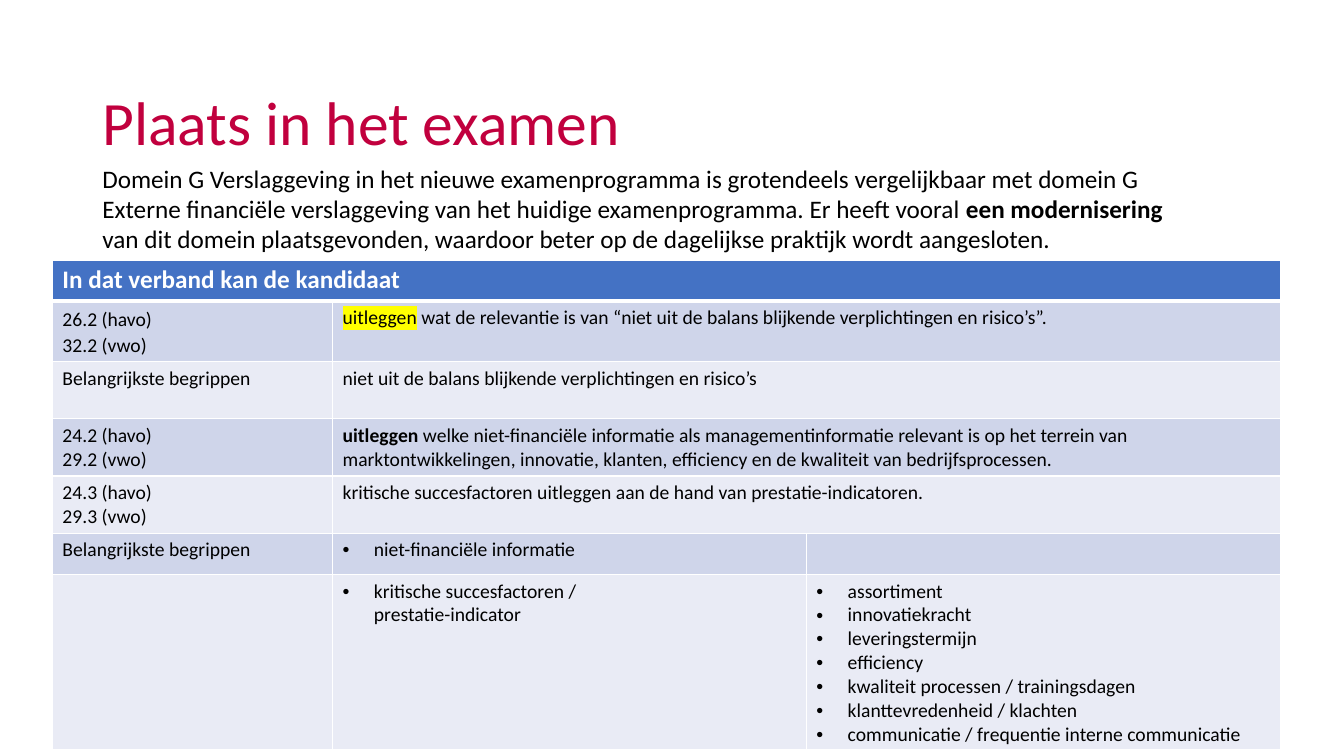
from lxml.etree import SubElement
from pptx import Presentation
from pptx.dml.color import RGBColor
from pptx.enum.text import MSO_ANCHOR, PP_ALIGN
from pptx.oxml import parse_xml
from pptx.oxml.ns import nsdecls, qn
from pptx.util import Cm, Pt

COLOURS = {
    "title": "C1003E", "text": "000000", "white": "FFFFFF", "header": "4472C4",
    "dark": "CFD5EA", "light": "E9EBF5", "marker": "FFFF00",
}
TITLE = {"name": "Calibri", "size": Pt(44), "bold": False}
INTRO = {"name": "Calibri", "size": Pt(18), "bold": False}
HEADER = {"name": "Calibri", "size": Pt(18), "bold": True}
CELL = {"name": "Calibri", "size": Pt(14), "bold": False}
BOLD = {"bold": True}

COLUMN_WIDTHS = [7.06, 11.94, 11.94]
ROW_HEIGHTS = [1.04, 1.49, 1.44, 1.44, 1.44, 1.04, 4.37]
BULLET_INDENT = Cm(0.79)

# Each row: level or term, then one or two content cells
# A cell is a list of paragraphs, a paragraph a list of (text, extra format) spans
ROWS = [
    [[[("26.2 (havo)", {})], [("32.2 (vwo)", {})]],
     [[("uitleggen", {"marker": True}),
       (" wat de relevantie is van “niet uit de balans blijkende "
        "verplichtingen en risico’s”.", {})]]],
    [[[("Belangrijkste begrippen", {})]],
     [[("niet uit de balans blijkende verplichtingen en risico’s", {})]]],
    [[[("24.2 (havo)\n29.2 (vwo)", {})]],
     [[("uitleggen", BOLD),
       (" welke niet-financiële informatie als managementinformatie relevant is "
        "op het terrein van marktontwikkelingen, innovatie, klanten, efficiency "
        "en de kwaliteit van bedrijfsprocessen.", {})]]],
    [[[("24.3 (havo)\n29.3 (vwo)", {})]],
     [[("kritische succesfactoren uitleggen aan de hand van "
        "prestatie-indicatoren.", {})]]],
    [[[("Belangrijkste begrippen", {})]],
     [[("niet-financiële informatie", {})]],
     []],
    [[],
     [[("kritische succesfactoren /\nprestatie-indicator", {})]],
     [[(factor, {})] for factor in (
         "assortiment", "innovatiekracht", "leveringstermijn", "efficiency",
         "kwaliteit processen / trainingsdagen", "klanttevredenheid / klachten",
         "communicatie / frequentie interne communicatie")]],
]


def colour(name):
    return RGBColor.from_string(COLOURS[name])


def add_span(para, text, values, colour_name):
    """Add text in one format; a newline becomes a line break."""
    for index, line in enumerate(text.split("\n")):
        if index:
            para.add_line_break()
        span = para.add_run()
        span.text = line
        span.font.color.rgb = colour(colour_name)
        for name, value in values.items():
            if name != "marker":
                setattr(span.font, name, value)
        if values.get("marker"):
            highlight = parse_xml(
                f'<a:highlight {nsdecls("a")}>'
                f'<a:srgbClr val="{COLOURS["marker"]}"/></a:highlight>')
            span.font._element.find(qn("a:solidFill")).addnext(highlight)


def add_bullet(para):
    properties = para._p.get_or_add_pPr()
    properties.set("marL", str(BULLET_INDENT))
    properties.set("indent", str(-BULLET_INDENT))
    SubElement(properties, qn("a:buFont")).set("typeface", "Arial")
    SubElement(properties, qn("a:buChar")).set("char", "•")


def fill_frame(frame, paragraphs, values, colour_name="text", bullets=False,
               line_spacing=None):
    for index, spans in enumerate(paragraphs):
        para = frame.add_paragraph() if index else frame.paragraphs[0]
        para.alignment = PP_ALIGN.LEFT
        if line_spacing:
            para.line_spacing = line_spacing
        if bullets:
            add_bullet(para)
        for text, extra in spans:
            add_span(para, text, {**values, **extra}, colour_name)


def style_cell(cell, fill_name, bottom_width=1):
    """Set the fill and the white borders of a cell."""
    cell.fill.solid()
    cell.fill.fore_color.rgb = colour(fill_name)
    widths = {"lnL": 1, "lnR": 1, "lnT": 1, "lnB": bottom_width}
    for index, (side, width) in enumerate(widths.items()):
        border = parse_xml(
            f'<a:{side} {nsdecls("a")} w="{Pt(width)}"><a:solidFill>'
            f'<a:srgbClr val="{COLOURS["white"]}"/></a:solidFill></a:{side}>')
        cell._tc.get_or_add_tcPr().insert(index, border)


def add_title(page):
    title = page.shapes.title
    title.left, title.top, title.width, title.height = (
        Cm(2.33), Cm(1.32), Cm(29.21), Cm(3.68))
    title.text_frame.vertical_anchor = MSO_ANCHOR.MIDDLE
    fill_frame(title.text_frame, [[("Plaats in het examen", {})]], TITLE,
               "title", line_spacing=0.9)


def add_intro(page):
    box = page.shapes.add_textbox(Cm(2.33), Cm(3.99), Cm(27.71), Cm(2.57))
    box.text_frame.word_wrap = True
    fill_frame(box.text_frame, [[
        ("Domein G Verslaggeving in het nieuwe examenprogramma is grotendeels "
         "vergelijkbaar met domein G Externe financiële verslaggeving van het "
         "huidige examenprogramma. Er heeft vooral ", {}),
        ("een modernisering ", BOLD),
        ("van dit domein plaatsgevonden, waardoor beter op de dagelijkse "
         "praktijk wordt aangesloten.", {}),
    ]], INTRO)


def add_exam_table(page):
    table = page.shapes.add_table(
        len(ROW_HEIGHTS), len(COLUMN_WIDTHS), Cm(1.32), Cm(6.55),
        Cm(sum(COLUMN_WIDTHS)), Cm(sum(ROW_HEIGHTS))).table
    table.first_row = table.horz_banding = False
    for column, width in zip(table.columns, COLUMN_WIDTHS):
        column.width = Cm(width)
    for row, height in zip(table.rows, ROW_HEIGHTS):
        row.height = Cm(height)

    # Header across all columns
    for cell in table.rows[0].cells:
        style_cell(cell, "header", bottom_width=3)
    table.cell(0, 0).merge(table.cell(0, 2))
    fill_frame(table.cell(0, 0).text_frame,
               [[("In dat verband kan de kandidaat", {})]], HEADER, "white")

    # Banded rows; rows with three cells hold bulleted terms
    for number, contents in enumerate(ROWS, start=1):
        for cell in table.rows[number].cells:
            style_cell(cell, "dark" if number % 2 else "light")
        split = len(contents) == 3
        if not split:
            table.cell(number, 1).merge(table.cell(number, 2))
        for position, paragraphs in enumerate(contents):
            cell = table.cell(number, position)
            fill_frame(cell.text_frame, paragraphs, CELL,
                       bullets=split and position > 0,
                       line_spacing=1.07 if len(paragraphs) == 2 else None)
            if not paragraphs:
                cell.text_frame.paragraphs[0].font.size = CELL["size"]


def main():
    deck = Presentation()
    deck.slide_width, deck.slide_height = Cm(33.87), Cm(19.05)
    page = deck.slides.add_slide(deck.slide_layouts[5])
    add_title(page)
    add_intro(page)
    add_exam_table(page)
    deck.save("out.pptx")


if __name__ == "__main__":
    main()
